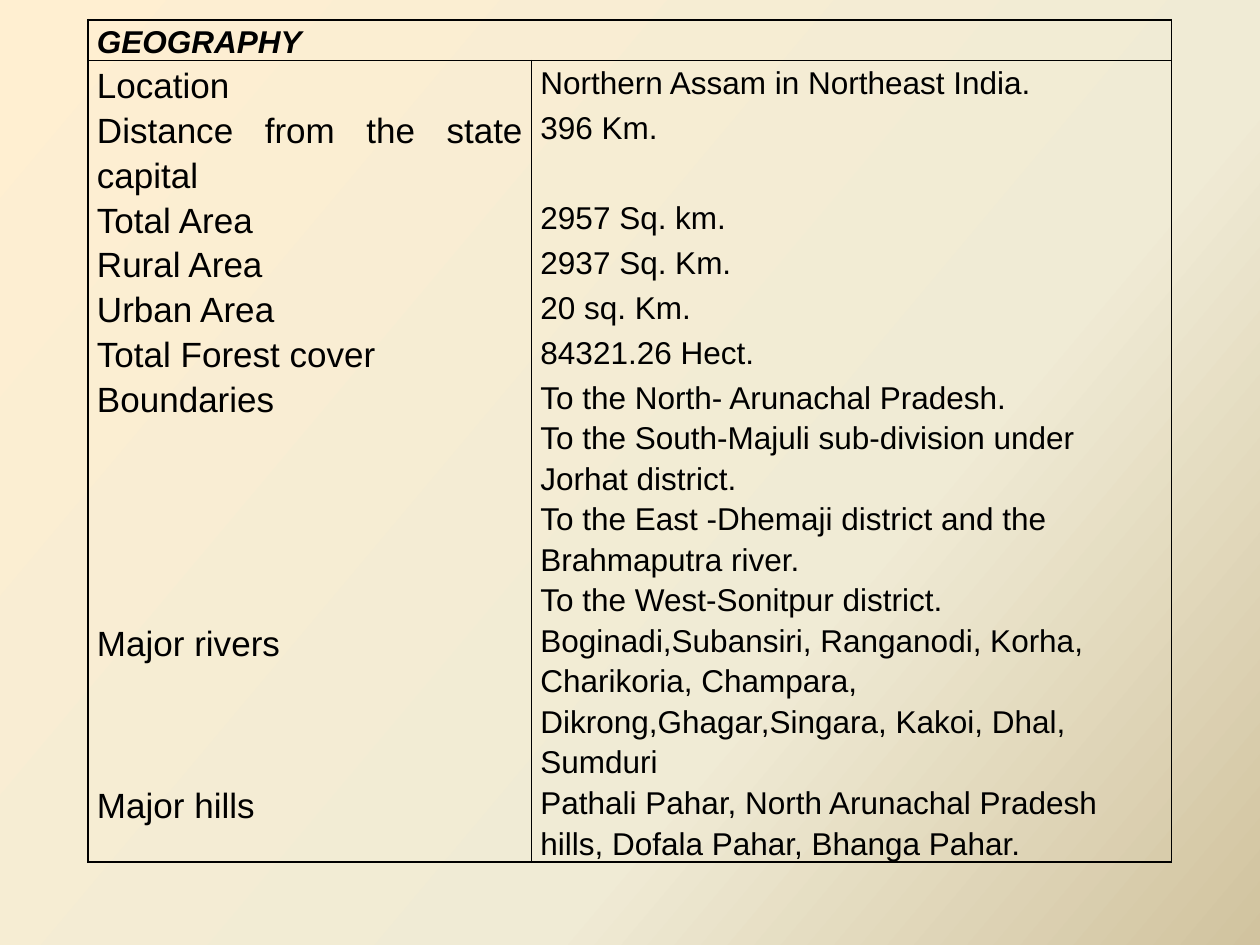
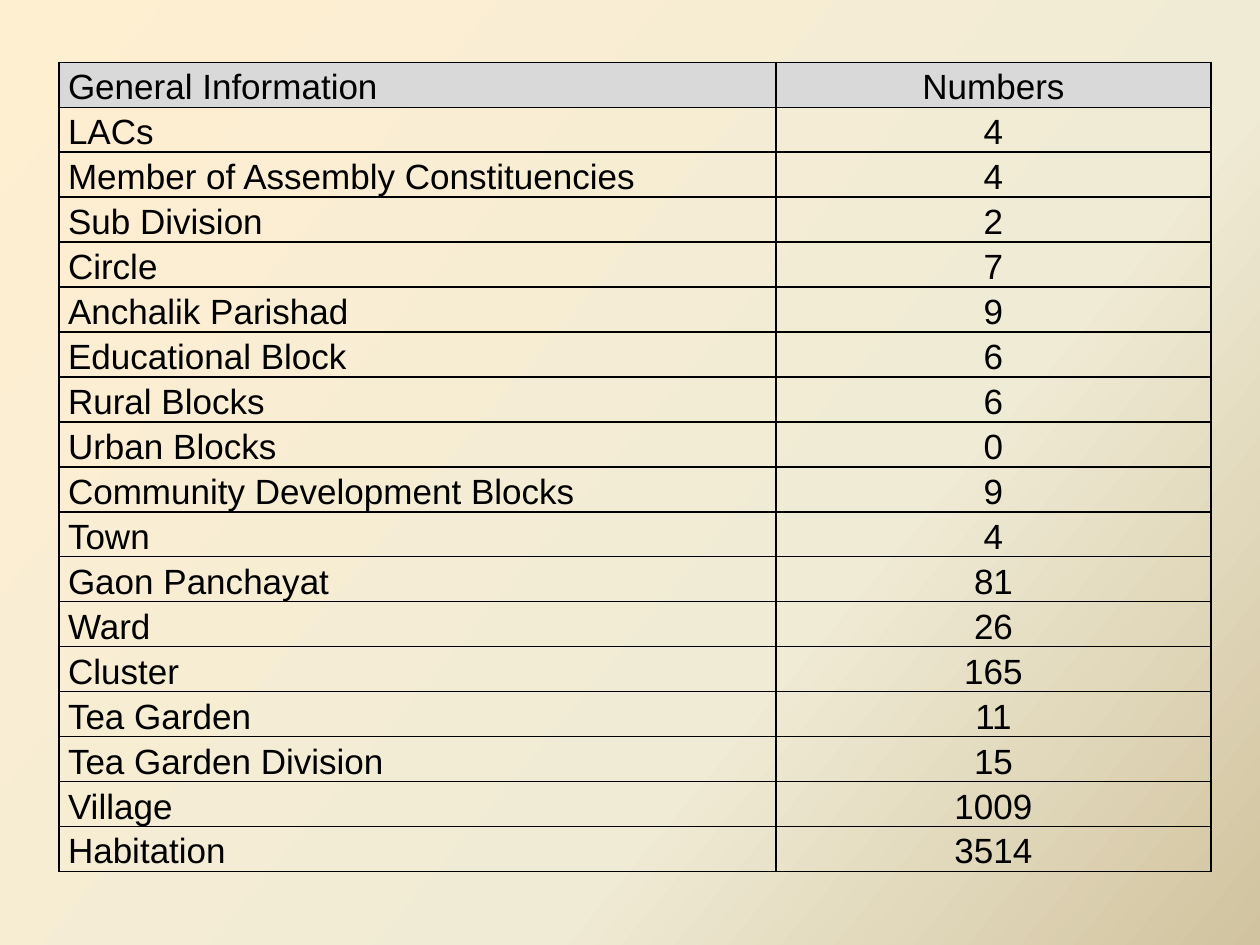
import copy
from dataclasses import dataclass

import lxml.etree
import pptx
import pptx.dml.color
import pptx.enum.text
import pptx.oxml.ns
import pptx.util

qn = pptx.oxml.ns.qn
RGB = pptx.dml.color.RGBColor.from_string
ALIGN = pptx.enum.text.PP_ALIGN
ANCHOR = pptx.enum.text.MSO_ANCHOR


@dataclass(frozen=True)
class Theme:
    font: str = "Arial"
    ink: str = "000000"
    heading_fill: str = "D9D9D9"
    backdrop: tuple = ((0, "FFEFD1"), (0.65, "F0EBD5"), (1, "D1C39F"))
    backdrop_angle: int = 40
    label_size: int = 20
    detail_size: int = 18
    line_spacing: float = 1.15
    thin: float = 1
    thick: float = 1.5
    plain_table: str = "{2D5ABB26-0587-4C30-8999-92F81FD0307C}"


theme = Theme()

# Presentation; lengths below are percentages of the slide's size
prs = pptx.Presentation()
prs.slide_width = pptx.util.Inches(10)
prs.slide_height = pptx.util.Inches(7.5)
across = prs.slide_width / 100
down = prs.slide_height / 100
text_line = 3.82 * down

# Shared gradient backdrop on the master
backdrop = prs.slide_master.background.fill
backdrop.gradient()
backdrop.gradient_angle = 360 - theme.backdrop_angle
stop_list = next(prs.slide_master.element.cSld.iter(qn("a:gsLst")))
stop_list.append(copy.deepcopy(stop_list[-1]))
for stop, (position, colour) in zip(backdrop.gradient_stops, theme.backdrop):
    stop.position = position
    stop.color.rgb = RGB(colour)


def add_ruled_table(left, top, columns, row_lines):
    """Add a slide with an unstyled table, its rows counted in text lines."""
    slide = prs.slides.add_slide(prs.slide_layouts[6])
    frame = slide.shapes.add_table(
        len(row_lines), len(columns), int(left * across), int(top * down),
        int(sum(columns) * across), int(sum(row_lines) * text_line))
    table = frame.table
    table.first_row = table.horz_banding = False
    next(frame._element.iter(qn("a:tableStyleId"))).text = theme.plain_table
    for column, width in zip(table.columns, columns):
        column.width = int(width * across)
    for row, lines in zip(table.rows, row_lines):
        row.height = int(lines * text_line)
    return table


def format_cell(cell, size, align, anchor, edges, fill=None):
    """Format a cell's text, its borders (side: width in points) and fill."""
    cell.margin_left = cell.margin_right = pptx.util.Inches(0.07)
    cell.margin_top = cell.margin_bottom = 0
    cell.vertical_anchor = anchor
    for paragraph in cell.text_frame.paragraphs:
        paragraph.alignment = align
        paragraph.line_spacing = theme.line_spacing
        for run in paragraph.runs:
            run.font.name = theme.font
            run.font.size = pptx.util.Pt(size)
            run.font.color.rgb = RGB(theme.ink)
    properties = cell._tc.get_or_add_tcPr()
    for side in "LRTB":
        border = lxml.etree.SubElement(properties, qn("a:ln" + side))
        if side in edges:
            border.set("w", str(pptx.util.Pt(edges[side])))
            solid = lxml.etree.SubElement(border, qn("a:solidFill"))
            lxml.etree.SubElement(solid, qn("a:srgbClr"), val=theme.ink)
        else:
            lxml.etree.SubElement(border, qn("a:noFill"))
    if fill:
        cell.fill.solid()
        cell.fill.fore_color.rgb = RGB(fill)
    else:
        cell.fill.background()


# Slide 1: geography of the district
geography = [
    ("GEOGRAPHY", "", 1),
    ("Location", "Northern Assam in Northeast India.", 1),
    ("Distance from the state capital", "396 Km.", 1),
    ("Total Area", "2957 Sq. km.", 1),
    ("Rural Area", "2937 Sq. Km.", 1),
    ("Urban Area", "20 sq. Km.", 1),
    ("Total Forest cover", "84321.26 Hect.", 1),
    ("Boundaries",
     "To the North- Arunachal Pradesh.\n"
     "To the South-Majuli sub-division under Jorhat district.\n"
     "To the East -Dhemaji district and the Brahmaputra river.\n"
     "To the West-Sonitpur district.", 6),
    ("Major rivers",
     "Boginadi,Subansiri, Ranganodi, Korha, Charikoria, Champara, "
     "Dikrong,Ghagar,Singara, Kakoi, Dhal, Sumduri", 3),
    ("Major hills",
     "Pathali Pahar, North Arunachal Pradesh hills, Dofala Pahar, "
     "Bhanga Pahar.", 2),
]
geography_table = add_ruled_table(
    7, 2.13, (35.2, 50.8), [lines for *_, lines in geography])
geography_table.cell(0, 0).merge(geography_table.cell(0, 1))
last = len(geography) - 1
for row, (label, detail, _) in enumerate(geography):
    edges = {"L": theme.thin, "R": theme.thin}
    if row <= 1:
        edges["T"] = theme.thin if row else theme.thick
    if row in (0, last):
        edges["B"] = theme.thick if row else theme.thin
    for column, text in enumerate((label, detail)):
        cell = geography_table.cell(row, column)
        if text:
            cell.text_frame.text = text
        is_label = row > 0 and column == 0
        format_cell(cell,
                    theme.label_size if is_label else theme.detail_size,
                    ALIGN.JUSTIFY if is_label else ALIGN.LEFT,
                    ANCHOR.TOP, edges)
heading = geography_table.cell(0, 0).text_frame.paragraphs[0].runs[0].font
heading.bold = heading.italic = True

# Slide 2: administrative units and their numbers
units = [
    ("General Information", "Numbers"),
    ("LACs", 4),
    ("Member of Assembly Constituencies", 4),
    ("Sub Division", 2),
    ("Circle", 7),
    ("Anchalik Parishad", 9),
    ("Educational Block", 6),
    ("Rural Blocks", 6),
    ("Urban Blocks", 0),
    ("Community Development Blocks", 9),
    ("Town", 4),
    ("Gaon Panchayat", 81),
    ("Ward", 26),
    ("Cluster", 165),
    ("Tea Garden", 11),
    ("Tea Garden Division", 15),
    ("Village", 1009),
    ("Habitation", 3514),
]
units_table = add_ruled_table(
    4.7, 6.6, (56.9, 34.5), [1] + [1.12] * (len(units) - 1))
for row, unit in enumerate(units):
    for column, value in enumerate(unit):
        cell = units_table.cell(row, column)
        cell.text_frame.text = str(value)
        format_cell(cell, theme.label_size,
                    ALIGN.CENTER if column else ALIGN.LEFT,
                    ANCHOR.MIDDLE, dict.fromkeys("LRTB", theme.thin),
                    None if row else theme.heading_fill)

prs.save("out.pptx")
